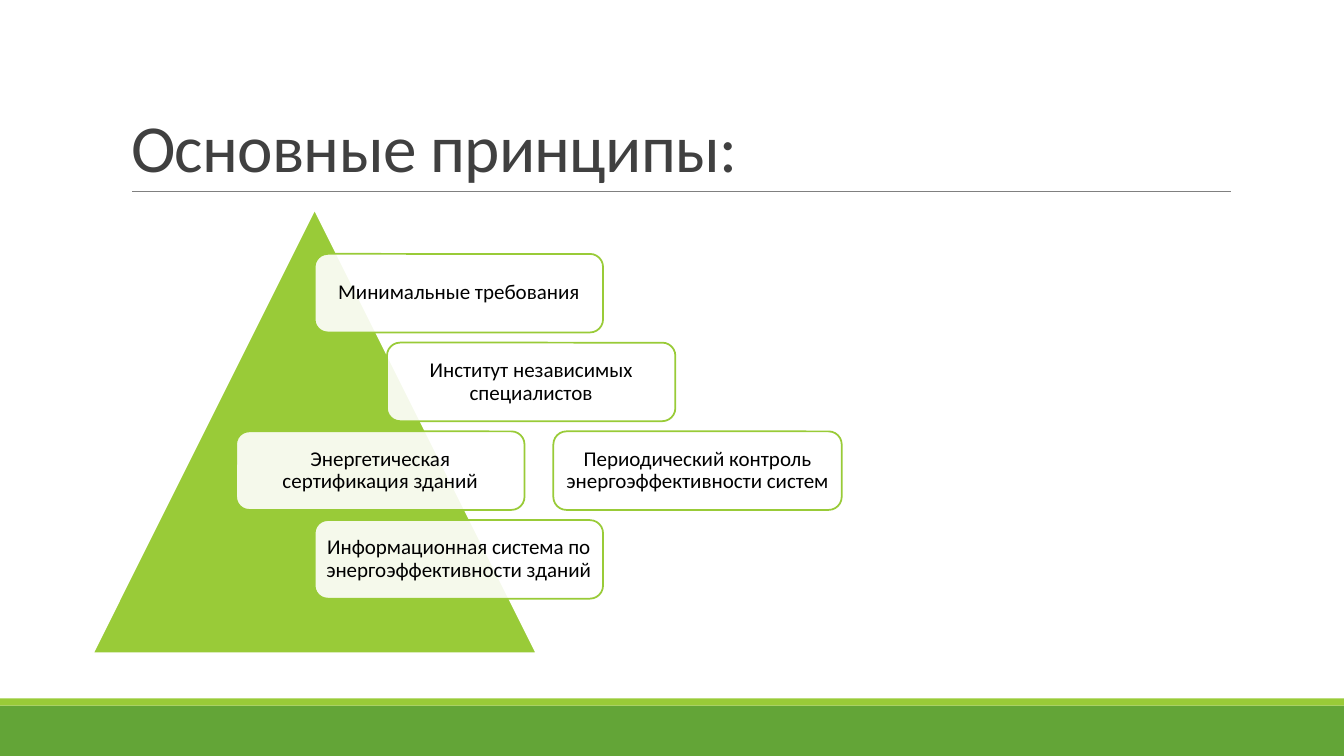
from dataclasses import dataclass

from lxml import etree
from pptx import Presentation
from pptx.dml.color import RGBColor
from pptx.enum.shapes import MSO_CONNECTOR, MSO_SHAPE
from pptx.enum.text import MSO_ANCHOR, MSO_AUTO_SIZE, PP_ALIGN
from pptx.oxml.ns import qn
from pptx.util import Cm, Pt

RECTANGLE = MSO_SHAPE.RECTANGLE
ROUNDED = MSO_SHAPE.ROUNDED_RECTANGLE
TRIANGLE = MSO_SHAPE.ISOSCELES_TRIANGLE
STRAIGHT = MSO_CONNECTOR.STRAIGHT
LEFT, CENTER = PP_ALIGN.LEFT, PP_ALIGN.CENTER
MIDDLE, BOTTOM = MSO_ANCHOR.MIDDLE, MSO_ANCHOR.BOTTOM
NO_AUTOFIT = MSO_AUTO_SIZE.NONE


@dataclass(frozen=True)
class Theme:
    """Colours, font and type sizes of the slide."""
    lime: RGBColor = RGBColor(0x99, 0xCB, 0x38)
    green: RGBColor = RGBColor(0x63, 0xA5, 0x37)
    white: RGBColor = RGBColor(0xFF, 0xFF, 0xFF)
    black: RGBColor = RGBColor(0, 0, 0)
    rule: RGBColor = RGBColor(0x80, 0x80, 0x80)
    heading: RGBColor = RGBColor(0x40, 0x40, 0x40)
    font: str = "Calibri"
    title_size: int = 48
    card_size: int = 15
    outline: float = 1.25


THEME = Theme()
SLIDE_WIDTH, SLIDE_HEIGHT = 33.87, 19.05

# Each principle: text, row, left offset from the pyramid as a share of its side.
PRINCIPLES = (
    ("Минимальные требования", 0, 0.5),
    ("Институт независимых специалистов", 1, 0.663),
    ("Энергетическая сертификация зданий", 2, 0.323),
    ("Информационная система по энергоэффективности зданий", 3, 0.5),
    ("Периодический контроль энергоэффективности систем", 2, 1.038),
)


def add_filled(slide, kind, box, fill, line=None):
    """Add a flat preset shape in a box of centimetres."""
    shape = slide.shapes.add_shape(kind, *map(Cm, box))
    shape.shadow.inherit = False
    shape.fill.solid()
    shape.fill.fore_color.rgb = fill
    if line is None:
        shape.line.fill.background()
    else:
        shape.line.color.rgb = line
        shape.line.width = Pt(THEME.outline)
    return shape


def format_text(text_frame, size, color, alignment, anchor, spacing):
    """Format the paragraphs and runs of a text frame."""
    text_frame.word_wrap = True
    text_frame.auto_size = NO_AUTOFIT
    text_frame.vertical_anchor = anchor
    for paragraph in text_frame.paragraphs:
        paragraph.alignment = alignment
        paragraph.line_spacing = spacing
        for run in paragraph.runs:
            run.font.name = THEME.font
            run.font.size = Pt(size)
            run.font.color.rgb = color


def add_footer(slide, left, top, width, height):
    """Draw the green footer band with a lime stripe on top."""
    stripe = 0.18
    add_filled(slide, RECTANGLE, (left, top + stripe, width, height - stripe), THEME.green)
    add_filled(slide, RECTANGLE, (left, top, width, stripe), THEME.lime)


def add_title(slide, left, top, width, height):
    """Place the title and the thin rule under it."""
    title = slide.shapes.title
    title.left, title.top, title.width, title.height = map(Cm, (left, top, width, height))
    title.text_frame.text = "Основные принципы:"
    format_text(title.text_frame, THEME.title_size, THEME.heading, LEFT, BOTTOM, 0.85)
    for run in title.text_frame.paragraphs[0].runs:
        run.font._element.set("spc", "-50")
    bottom = Cm(top + height)
    rule = slide.shapes.add_connector(
        STRAIGHT, Cm(left + 0.28), bottom, Cm(left + width + 0.02), bottom)
    rule.line.color.rgb = THEME.rule
    rule.line.width = Pt(0.5)
    etree.SubElement(rule._element.spPr, qn("a:effectLst"))


def add_card(slide, text, box):
    """Draw one translucent rounded card with centred text."""
    card = add_filled(slide, ROUNDED, box, THEME.white, THEME.lime)
    color = card._element.spPr.find(qn("a:solidFill"))[0]
    etree.SubElement(color, qn("a:alpha"), val="90000")
    frame = card.text_frame
    frame.margin_left = frame.margin_right = Cm(0.15)
    frame.margin_top = frame.margin_bottom = Cm(0.15)
    frame.text = text
    format_text(frame, THEME.card_size, THEME.black, CENTER, MIDDLE, 0.9)


def add_pyramid(slide, left, top, side):
    """Draw the triangle and its cards in evenly spaced rows."""
    add_filled(slide, TRIANGLE, (left, top, side, side), THEME.lime, THEME.white)
    card_width, card_height = side * 0.65, side * 0.177
    first_row, row_step = top + side * 0.1, side * 0.2
    for text, row, offset in PRINCIPLES:
        box = (left + side * offset, first_row + row * row_step, card_width, card_height)
        add_card(slide, text, box)


def build_principles_slide(presentation):
    """Build the slide of main principles."""
    slide = presentation.slides.add_slide(presentation.slide_layouts[5])
    add_footer(slide, 0, 17.6, SLIDE_WIDTH, SLIDE_HEIGHT - 17.6)
    add_title(slide, 3.05, 0.79, 27.94, 4.04)
    add_pyramid(slide, 2.34, 5.28, 11.18)


def main():
    """Create and save the presentation."""
    presentation = Presentation()
    presentation.slide_width = Cm(SLIDE_WIDTH)
    presentation.slide_height = Cm(SLIDE_HEIGHT)
    build_principles_slide(presentation)
    presentation.save("out.pptx")


if __name__ == "__main__":
    main()
